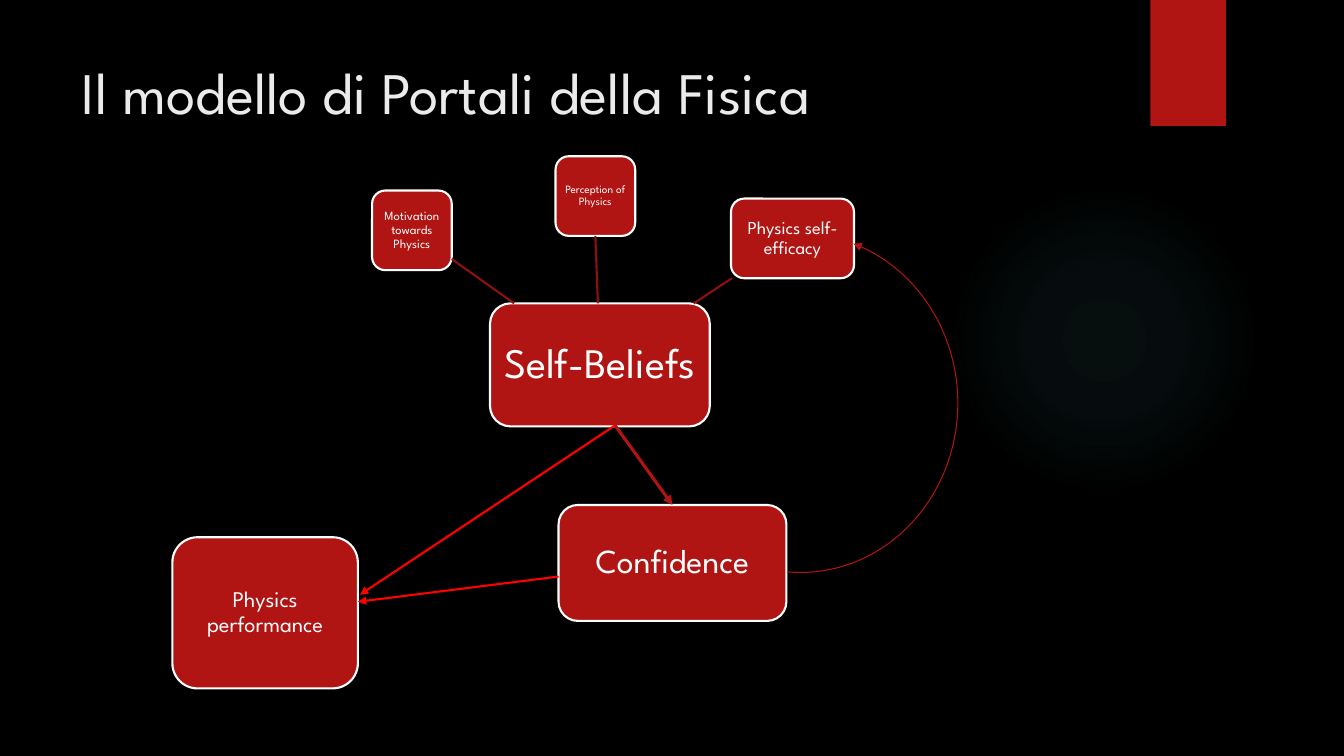
import pptx
import pptx.dml.color
import pptx.enum.shapes
import pptx.enum.text
import pptx.oxml
import pptx.oxml.ns
import pptx.util

PX = 9144  # EMU per px, 100 px to the inch
FONT = "League Spartan"
COLORS = {
    "background": "000000",
    "title": "EBEBEB",
    "text": "FFFFFF",
    "box": "B01513",
    "branch": "8D110F",
    "effect": "FF0000",
    "glow": "50B9C1",
}
SHAPES = pptx.enum.shapes.MSO_SHAPE
ANCHOR = pptx.enum.text.MSO_ANCHOR
ALIGN = pptx.enum.text.PP_ALIGN
NS = pptx.oxml.ns.nsdecls("a")


def px(*lengths):
    return [pptx.util.Emu(length * PX) for length in lengths]


def rgb(name):
    return pptx.dml.color.RGBColor.from_string(COLORS[name])


def apply(target, formats):
    for name, value in formats.items():
        setattr(target, name, value)


class ModelSlide:
    def __init__(self, deck):
        self.page = deck.slides.add_slide(deck.slide_layouts[5])
        fill = self.page.background.fill
        fill.solid()
        fill.fore_color.rgb = rgb("background")

    def label(self, frame, text, size, color, frame_format, para_format):
        apply(frame, {"word_wrap": True, **frame_format})
        para = frame.paragraphs[0]
        apply(para, para_format)
        span = para.add_run()
        span.text = text
        apply(span.font, {"name": FONT, "size": pptx.util.Pt(size)})
        span.font.color.rgb = rgb(color)

    def title(self, text, area):
        title = self.page.shapes.title
        apply(title, dict(zip(("left", "top", "width", "height"), px(*area))))
        self.label(title.text_frame, text, 42, "title",
                   {"vertical_anchor": ANCHOR.TOP,
                    "auto_size": pptx.enum.text.MSO_AUTO_SIZE.NONE},
                   {"alignment": ALIGN.LEFT})

    def shape(self, kind, area):
        shape = self.page.shapes.add_shape(kind, *px(*area))
        shape.shadow.inherit = False
        return shape

    def block(self, kind, area):
        block = self.shape(kind, area)
        block.fill.solid()
        block.fill.fore_color.rgb = rgb("box")
        block.line.fill.background()
        return block

    def glow(self, area, stops):
        """Add a circle whose faint colour fades outwards; stops are (place, opacity) in percent."""
        circle = self.shape(SHAPES.OVAL, area)
        circle.line.fill.background()
        colors = "".join(
            f'<a:gs pos="{place * 1000}"><a:srgbClr val="{COLORS["glow"]}">'
            f'<a:alpha val="{opacity * 1000}"/></a:srgbClr></a:gs>'
            for place, opacity in stops)
        gradient = pptx.oxml.parse_xml(
            f'<a:gradFill {NS}><a:gsLst>{colors}</a:gsLst><a:path path="circle">'
            '<a:fillToRect l="50000" t="50000" r="50000" b="50000"/></a:path></a:gradFill>')
        circle.element.spPr.find(pptx.oxml.ns.qn("a:prstGeom")).addnext(gradient)

    def concept(self, text, area, size, inset):
        box = self.block(SHAPES.ROUNDED_RECTANGLE, area)
        self.stroke(box, "text", 1.5)
        margins = ("margin_left", "margin_top", "margin_right", "margin_bottom")
        self.label(box.text_frame, text, size, "text",
                   {"vertical_anchor": ANCHOR.MIDDLE, **dict.fromkeys(margins, px(inset)[0])},
                   {"alignment": ALIGN.CENTER, "line_spacing": 0.9})
        return box

    def stroke(self, shape, color, width, arrow=None):
        """Format a line; arrow is headEnd or tailEnd."""
        shape.line.color.rgb = rgb(color)
        shape.line.width = pptx.util.Pt(width)
        if arrow:
            line = shape.element.spPr.find(pptx.oxml.ns.qn("a:ln"))
            line.append(pptx.oxml.parse_xml(f'<a:{arrow} {NS} type="triangle"/>'))

    def link(self, start, end, color, width=1.5, arrow=None, target=None):
        """Draw a straight line; target is the (box, side) its end is joined to."""
        link = self.page.shapes.add_connector(
            pptx.enum.shapes.MSO_CONNECTOR.STRAIGHT, *px(*start, *end))
        if target:
            link.end_connect(*target)
        self.stroke(link, color, width, arrow)
        link.element.spPr.append(pptx.oxml.parse_xml(f"<a:effectLst {NS}/>"))

    def arc(self, area, angles, color, width):
        """Draw an open arc between two angles in degrees, with an arrowhead at its start."""
        arc = self.shape(SHAPES.ARC, area)
        arc.fill.background()
        for index, angle in enumerate(angles):
            arc.adjustments[index] = angle * 0.6
        self.stroke(arc, color, width, "headEnd")


def main():
    deck = pptx.Presentation()
    deck.slide_width, deck.slide_height = px(1333, 750)
    slide = ModelSlide(deck)

    slide.glow((941, 183, 308, 308), [(0, 7), (36, 6), (69, 0)])
    slide.block(SHAPES.RECTANGLE, (1141, 0, 75, 125))
    slide.title("Il modello di Portali della Fisica", (71, 50, 1029, 153))

    concepts = [
        ("Self-Beliefs", (486, 301, 218, 122), 30, 8),
        ("Perception of Physics", (551, 155, 79, 79), 8, 2),
        ("Physics self-efficacy", (725, 197, 122, 79), 13, 4),
        ("Motivation towards Physics", (369, 189, 79, 79), 9, 3),
        ("Confidence", (554, 501, 226, 115), 24, 7),
        ("Physics performance", (171, 533, 184, 150), 16, 4),
    ]
    boxes = {concept[0]: slide.concept(*concept) for concept in concepts}

    slide.link((593, 301), (591, 234), "branch", target=(boxes["Perception of Physics"], 2))
    slide.link((688, 301), (726, 276), "branch")
    slide.link((510, 301), (448, 257), "branch")
    slide.link((554, 572), (355, 597), "effect", arrow="tailEnd")
    slide.link((610, 422), (667, 501), "box", 2.25, "tailEnd", (boxes["Confidence"], 0))
    slide.link((610, 422), (357, 590), "effect", arrow="tailEnd")
    slide.arc((638, 232, 312, 336), (288.36, 94.43), "box", 0.75)

    deck.save("out.pptx")


if __name__ == "__main__":
    main()
